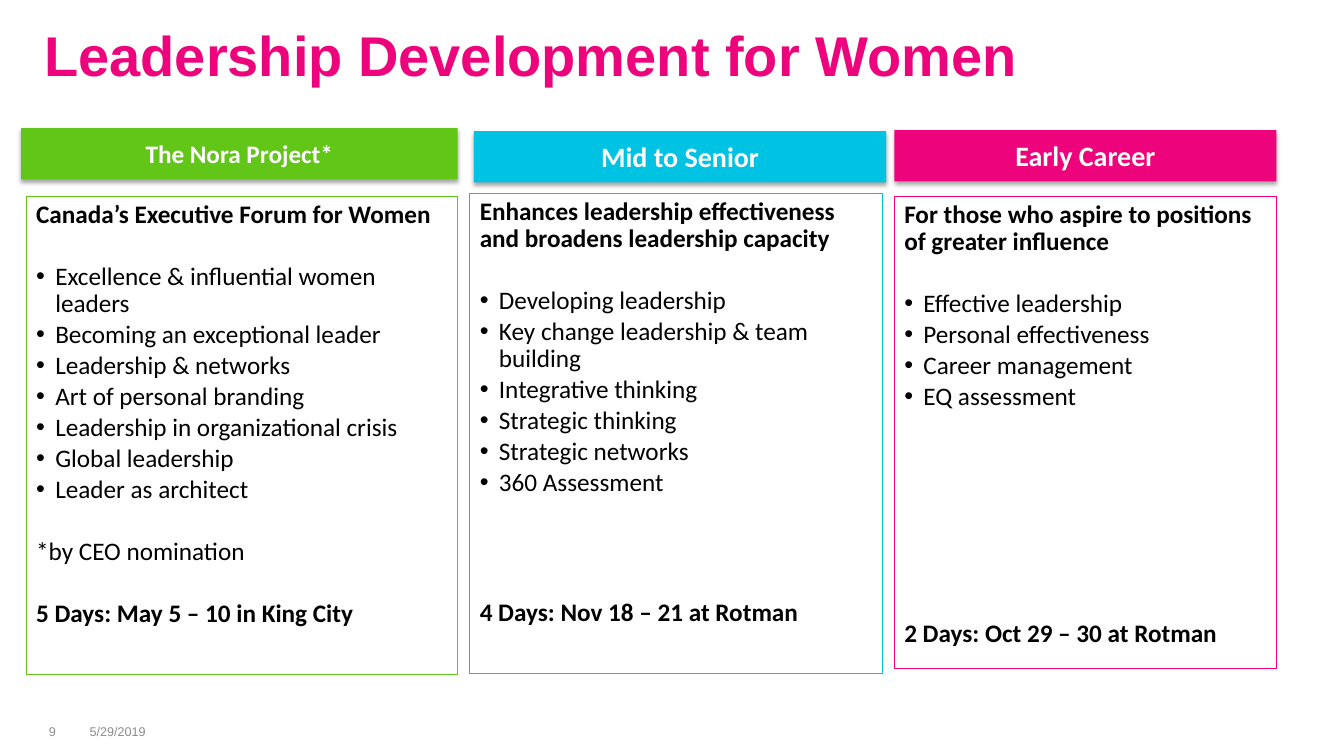
"""Build a slide with three leadership programs for women."""
import pptx
import pptx.util
import pptx.dml.color
import pptx.enum.shapes
import pptx.enum.text
import pptx.oxml
import pptx.oxml.ns

Inches, Pt = pptx.util.Inches, pptx.util.Pt
RGB = pptx.dml.color.RGBColor.from_string
ALIGN = pptx.enum.text.PP_ALIGN
ANCHOR = pptx.enum.text.MSO_ANCHOR
RECT = pptx.enum.shapes.MSO_SHAPE.RECTANGLE

TITLE = "Leadership Development for Women"
DATE = "5/29/2019"
PAGE = "9"
COLUMNS = [
    {
        "name": "The Nora Project*", "color": "green", "size": "body",
        "head": (0.21, 1.27, 4.33, 0.51), "box": (0.26, 1.95, 4.28, 4.74),
        "lead": "Canada’s Executive Forum for Women",
        "points": ["Excellence & influential women leaders",
                   "Becoming an exceptional leader",
                   "Leadership & networks",
                   "Art of personal branding",
                   "Leadership in organizational crisis",
                   "Global leadership",
                   "Leader as architect"],
        "note": "*by CEO nomination",
        "days": "5 Days: May 5 – 10 in King City", "gap": 22.1,
    },
    {
        "name": "Mid to Senior", "color": "blue", "size": "head",
        "head": (4.7, 1.3, 4.09, 0.51), "box": (4.66, 1.92, 4.09, 4.76),
        "lead": "Enhances leadership effectiveness and broadens leadership capacity",
        "points": ["Developing leadership",
                   "Key change leadership & team building",
                   "Integrative thinking",
                   "Strategic thinking",
                   "Strategic networks",
                   "360 Assessment"],
        "note": None,
        "days": "4 Days: Nov 18 – 21 at Rotman", "gap": 70.7,
    },
    {
        "name": "Early Career", "color": "pink", "size": "head",
        "head": (8.87, 1.29, 3.79, 0.51), "box": (8.87, 1.95, 3.79, 4.68),
        "lead": "For those who aspire to positions of greater influence",
        "points": ["Effective leadership",
                   "Personal effectiveness",
                   "Career management",
                   "EQ assessment"],
        "note": None,
        "days": "2 Days: Oct 29 – 30 at Rotman", "gap": 147.1,
    },
]
THEME = {
    "green": "62C619", "blue": "00C2E2", "pink": "ED037C",
    "white": "FFFFFF", "black": "000000", "gray": "8C8C8C",
    "title": 40, "head": 20, "body": 18, "foot": 9,
    "sans": "Arial", "text": "Calibri",
}
GAP = 22.1
INDENT = 0.19


def style(para, size, color, face, bold=False):
    """Format all runs of a paragraph."""
    for run in para.runs:
        font = run.font
        font.size, font.name, font.bold = Pt(THEME[size]), THEME[face], bold
        font.color.rgb = RGB(THEME[color])


def label(slide, place, text, look, anchor, align=ALIGN.LEFT, inset=0.1):
    """Add a text box with one line."""
    frame = slide.shapes.add_textbox(*map(Inches, place)).text_frame
    frame.word_wrap = True
    frame.vertical_anchor = anchor
    frame.margin_left = Inches(inset)
    frame.text = text
    frame.paragraphs[0].alignment = align
    style(frame.paragraphs[0], *look)


def shade(shape):
    """Give a shape a soft shadow below it."""
    shape.shadow.inherit = False
    effects = shape._element.spPr.find(pptx.oxml.ns.qn("a:effectLst"))
    effects.append(pptx.oxml.parse_xml(
        f'<a:outerShdw {pptx.oxml.ns.nsdecls("a")} blurRad="{Pt(3.1)}" '
        f'dist="{Pt(1.8)}" dir="5400000" rotWithShape="0">'
        f'<a:srgbClr val="{THEME["black"]}"><a:alpha val="35000"/></a:srgbClr>'
        '</a:outerShdw>'))


def bullet(para):
    """Turn a paragraph into a bulleted one with a hanging indent."""
    props = para._p.get_or_add_pPr()
    props.set("marL", str(Inches(INDENT)))
    props.set("indent", str(-Inches(INDENT)))
    space = pptx.oxml.ns.nsdecls("a")
    props.append(pptx.oxml.parse_xml(f'<a:buFont {space} typeface="Arial"/>'))
    props.append(pptx.oxml.parse_xml(f'<a:buChar {space} char="•"/>'))


def header(slide, col):
    """Draw the filled heading of a column."""
    shape = slide.shapes.add_shape(RECT, *map(Inches, col["head"]))
    shade(shape)
    shape.fill.solid()
    shape.fill.fore_color.rgb = RGB(THEME[col["color"]])
    shape.line.fill.background()
    frame = shape.text_frame
    frame.text = col["name"]
    frame.vertical_anchor = ANCHOR.MIDDLE
    frame.paragraphs[0].alignment = ALIGN.CENTER
    style(frame.paragraphs[0], col["size"], "white", "text", True)


def panel(slide, col):
    """Draw the outlined box of a column with its text."""
    shape = slide.shapes.add_shape(RECT, *map(Inches, col["box"]))
    shape.shadow.inherit = False
    shape.fill.background()
    shape.line.color.rgb = RGB(THEME[col["color"]])
    shape.line.width = Pt(0.75)
    frame = shape.text_frame
    frame.word_wrap = True
    frame.vertical_anchor = ANCHOR.TOP

    rows = [(col["lead"], True, False, 0)]
    rows += [(point, False, True, 0 if i else GAP)
             for i, point in enumerate(col["points"])]
    if col["note"]:
        rows.append((col["note"], False, False, GAP))
    rows.append((col["days"], True, False, col["gap"]))

    for i, (text, bold, dot, gap) in enumerate(rows):
        para = frame.add_paragraph() if i else frame.paragraphs[0]
        para.text = text
        if dot:
            bullet(para)
        para.alignment = ALIGN.LEFT
        para.line_spacing = 0.9
        para.space_before = Pt(gap)
        para.space_after = Pt(2.7)
        style(para, "body", "black", "text", bold)


def main():
    """Build and save the slide."""
    deck = pptx.Presentation()
    deck.slide_width, deck.slide_height = Inches(13.33), Inches(7.5)
    slide = deck.slides.add_slide(deck.slide_layouts[6])
    label(slide, (0.37, 0.3, 10.5, 0.62), TITLE,
          ("title", "pink", "sans", True), ANCHOR.BOTTOM, inset=0.07)
    foot = ("foot", "gray", "sans")
    label(slide, (0.79, 7.14, 1, 0.24), DATE, foot, ANCHOR.MIDDLE)
    label(slide, (0.26, 7.14, 0.52, 0.24), PAGE, foot, ANCHOR.MIDDLE,
          ALIGN.CENTER)
    for col in COLUMNS:
        header(slide, col)
        panel(slide, col)
    deck.save("out.pptx")


if __name__ == "__main__":
    main()
